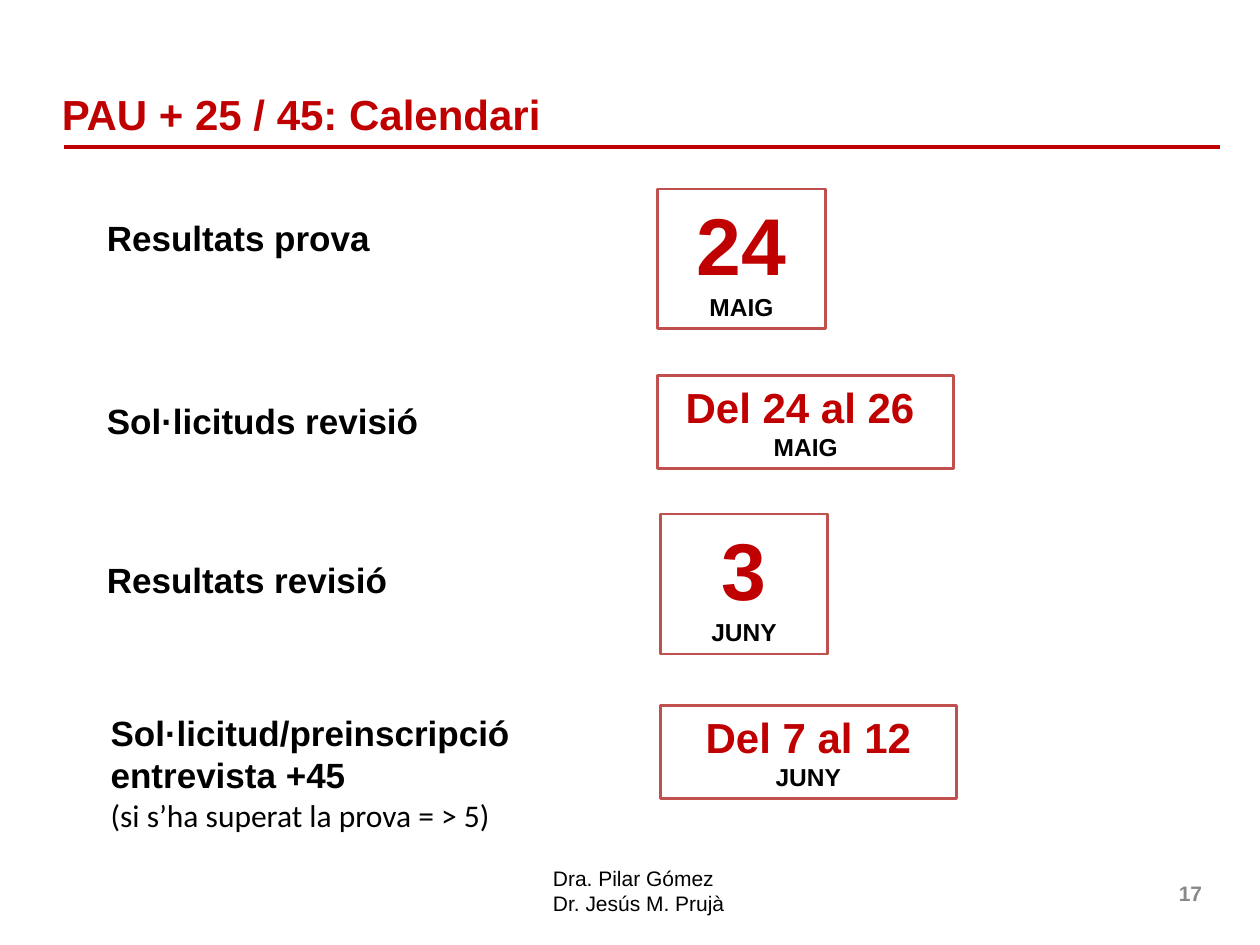
from lxml.etree import SubElement
from pptx import Presentation
from pptx.dml.color import RGBColor
from pptx.enum.shapes import MSO_CONNECTOR, MSO_SHAPE
from pptx.enum.text import MSO_ANCHOR, PP_ALIGN
from pptx.oxml.ns import qn
from pptx.util import Inches, Pt

RED = RGBColor(0xC0, 0x00, 0x00)
BORDER = RGBColor(0xC0, 0x50, 0x4D)
BLACK = RGBColor(0x00, 0x00, 0x00)
GREY = RGBColor(0x89, 0x89, 0x89)
COLUMNS, ROWS = 100, 75
LABEL_COLUMN, DATE_COLUMN = 7.5, 52.2


class CalendarSlide:
    """Draws calendar elements on a slide divided into 100 columns and 75 rows."""

    def __init__(self, presentation):
        self.column = presentation.slide_width / COLUMNS
        self.row = presentation.slide_height / ROWS
        self.slide = presentation.slides.add_slide(presentation.slide_layouts[5])

    def place(self, left, top, width, height):
        return (round(left * self.column), round(top * self.row),
                round(width * self.column), round(height * self.row))

    def fill_text(self, frame, paragraphs, align=PP_ALIGN.LEFT, anchor=MSO_ANCHOR.TOP):
        frame.word_wrap = True
        frame.vertical_anchor = anchor
        for index, runs in enumerate(paragraphs):
            paragraph = frame.add_paragraph() if index else frame.paragraphs[0]
            paragraph.alignment = align
            for text, size, color, bold, font in runs:
                run = paragraph.add_run()
                run.text = text
                run.font.size = Pt(size)
                run.font.color.rgb = color
                run.font.bold = bold
                run.font.name = font

    def title(self, text, *box):
        shape = self.slide.shapes.title
        shape.left, shape.top, shape.width, shape.height = self.place(*box)
        self.fill_text(shape.text_frame, [[(text, 24, RED, True, "Arial")]],
                       anchor=MSO_ANCHOR.MIDDLE)

    def rule(self, left, right, top):
        x, y, width, _ = self.place(left, top, right - left, 0)
        line = self.slide.shapes.add_connector(MSO_CONNECTOR.STRAIGHT, x, y, x + width, y)
        line.line.color.rgb = RED
        line.line.width = Pt(2.25)
        SubElement(line._element.spPr, qn("a:effectLst"))

    def text(self, box, paragraphs, **layout):
        shape = self.slide.shapes.add_textbox(*self.place(*box))
        self.fill_text(shape.text_frame, paragraphs, **layout)

    def date(self, left, top, width, height, day, day_size, month):
        shape = self.slide.shapes.add_shape(
            MSO_SHAPE.RECTANGLE, *self.place(left, top, width, height))
        shape.shadow.inherit = False
        shape.fill.background()
        shape.line.color.rgb = BORDER
        shape.line.width = Pt(1.5)
        self.fill_text(shape.text_frame,
                       [[(day, day_size, RED, True, "Arial")],
                        [(month, 14, BLACK, True, "Arial")]],
                       align=PP_ALIGN.CENTER)

    def single_day(self, left, top, day, month):
        self.date(left, top, 13.3, 11.1, day, 46, month)

    def period(self, left, top, days, month):
        self.date(left, top, 23.5, 7.4, days, 24, month)


def main():
    presentation = Presentation()
    presentation.slide_width = Inches(10)
    presentation.slide_height = Inches(7.5)
    calendar = CalendarSlide(presentation)

    calendar.rule(5.1, 96.8, 11.7)
    calendar.title("PAU + 25 / 45: Calendari", 3.9, 6.3, 93.7, 5.5)

    for label, top, width in (("Resultats prova", 16.7, 28),
                              ("Sol·licituds revisió", 31.2, 30),
                              ("Resultats revisió", 43.8, 28)):
        calendar.text((LABEL_COLUMN, top, width, 4.6),
                      [[(label, 20, BLACK, True, "Arial")]])
    calendar.text((LABEL_COLUMN + 0.3, 56, 38.6, 10.8), [
        [("Sol·licitud/preinscripció entrevista +45", 20, BLACK, True, "Arial")],
        [("(si s’ha superat la prova = > 5)", 18, BLACK, False, "Calibri")],
    ])

    calendar.single_day(DATE_COLUMN, 15, "24", "MAIG")
    calendar.period(DATE_COLUMN, 29.8, "Del 24 al 26 ", "MAIG")
    calendar.single_day(DATE_COLUMN + 0.2, 40.8, "3", "JUNY")
    calendar.period(DATE_COLUMN + 0.2, 56, "Del 7 al 12", "JUNY")

    calendar.text((42.9, 68.2, 15.7, 5.1),
                  [[(name, 12, BLACK, False, "Arial")]
                   for name in ("Dra. Pilar Gómez", "Dr. Jesús M. Prujà")])
    calendar.text((73.1, 68.9, 23.3, 4), [[("17", 12, GREY, True, "Arial")]],
                  align=PP_ALIGN.RIGHT, anchor=MSO_ANCHOR.MIDDLE)
    presentation.save("out.pptx")


if __name__ == "__main__":
    main()
